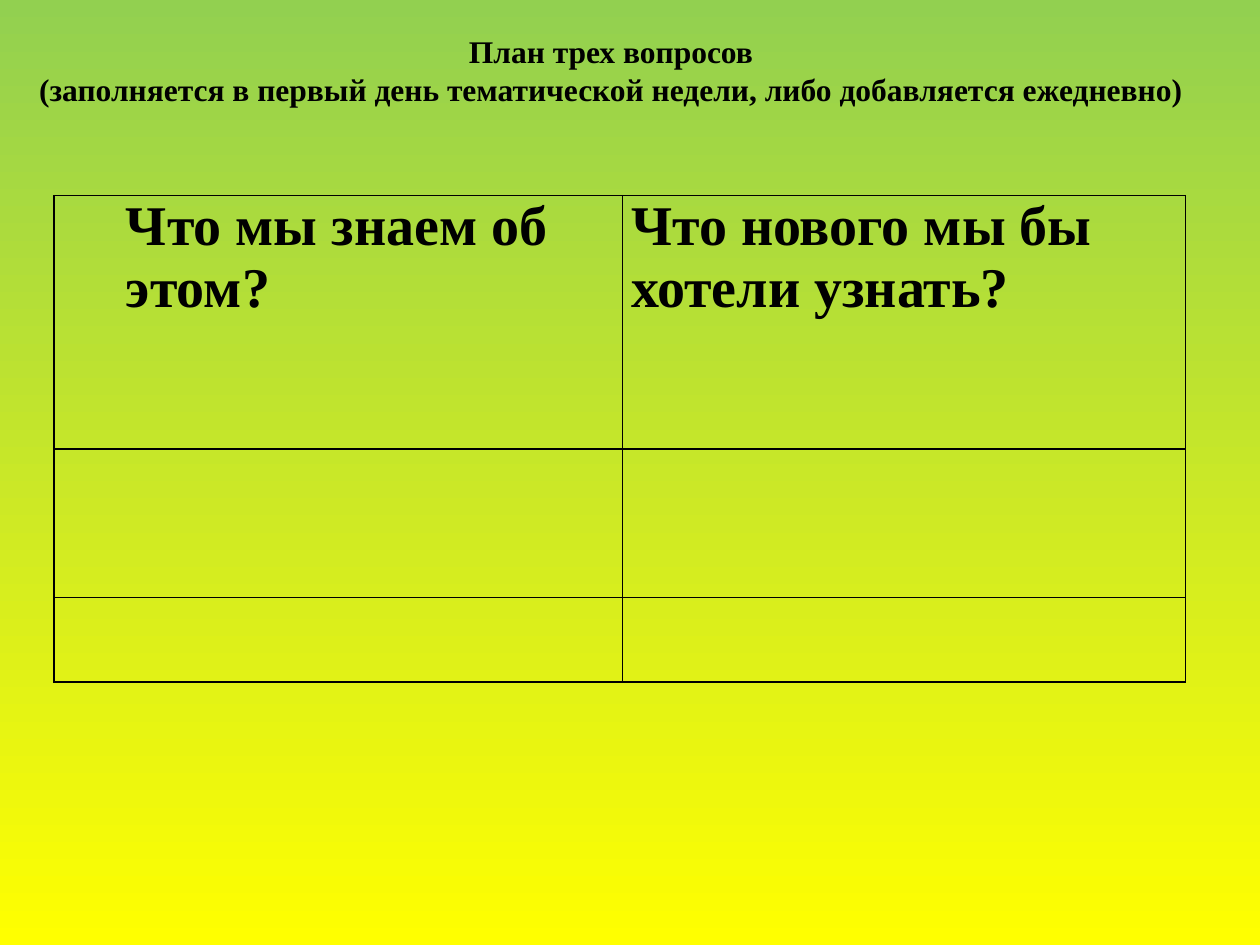
import pptx
import pptx.util
import pptx.dml.color
import pptx.enum.text
import pptx.oxml.ns
import lxml.etree

GREEN = pptx.dml.color.RGBColor(0x92, 0xD0, 0x50)
YELLOW = pptx.dml.color.RGBColor(0xFF, 0xFF, 0x00)
BLACK = pptx.dml.color.RGBColor(0, 0, 0)

WIDE = pptx.util.Inches(10)
HIGH = pptx.util.Inches(7.5)
FONT = {"name": "Times New Roman", "bold": True}

TITLE = [
    "План трех вопросов",
    "(заполняется в первый день тематической недели, либо добавляется ежедневно)",
]
HEADS = ["Что мы знаем об этом?", "Что нового мы бы хотели узнать?"]
INDENTS = [0.5, 0]
COLS = [4.51, 4.47]
ROWS = [2.01, 1.18, 0.67]


def place(left, top, width, height):
    """Turn shares of the slide into lengths."""
    return [int(part * side) for part, side in
            zip((left, top, width, height), (WIDE, HIGH) * 2)]


def apply(item, values):
    for name, value in values.items():
        setattr(item, name, value)


def write(para, text, size):
    run = para.add_run()
    run.text = text
    apply(run.font, {**FONT, "size": pptx.util.Pt(size)})
    run.font.color.rgb = BLACK


def paint(slide):
    fill = slide.background.fill
    fill.gradient()
    fill.gradient_angle = 270
    for stop, color in zip(fill.gradient_stops, (GREEN, YELLOW)):
        stop.color.rgb = color


def add_title(slide):
    box = slide.shapes.add_textbox(*place(0.016, 0.025, 0.938, 0.135))
    frame = box.text_frame
    apply(frame, {
        "word_wrap": False,
        "auto_size": pptx.enum.text.MSO_AUTO_SIZE.NONE,
        "vertical_anchor": pptx.enum.text.MSO_ANCHOR.TOP,
        "margin_top": pptx.util.Inches(0.07),
    })
    for index, text in enumerate(TITLE):
        para = frame.add_paragraph() if index else frame.paragraphs[0]
        para.alignment = pptx.enum.text.PP_ALIGN.CENTER
        write(para, text, 18)


def border(cell):
    props = cell._tc.get_or_add_tcPr()
    for side in "LRTB":
        line = lxml.etree.SubElement(
            props, pptx.oxml.ns.qn("a:ln" + side), w=str(pptx.util.Pt(1)))
        fill = lxml.etree.SubElement(line, pptx.oxml.ns.qn("a:solidFill"))
        lxml.etree.SubElement(
            fill, pptx.oxml.ns.qn("a:srgbClr"), val=str(BLACK))


def add_grid(slide):
    area = place(0.043, 0.207, 0.898, 0.515)
    table = slide.shapes.add_table(len(ROWS), len(COLS), *area).table
    apply(table, {"first_row": False, "horz_banding": False})
    for col, width in zip(table.columns, COLS):
        col.width = pptx.util.Inches(width)
    for row, height in zip(table.rows, ROWS):
        row.height = pptx.util.Inches(height)

    # Clear cells with thin black borders
    inset = pptx.util.Inches(0.07)
    for cell in table.iter_cells():
        border(cell)
        cell.fill.background()
        apply(cell, {"margin_left": inset, "margin_right": inset,
                     "margin_top": 0, "margin_bottom": 0})

    # Questions in the top row
    for col, (text, indent) in enumerate(zip(HEADS, INDENTS)):
        para = table.cell(0, col).text_frame.paragraphs[0]
        para._p.get_or_add_pPr().set("marL", str(pptx.util.Inches(indent)))
        write(para, text, 32)


def main():
    deck = pptx.Presentation()
    apply(deck, {"slide_width": WIDE, "slide_height": HIGH})
    slide = deck.slides.add_slide(deck.slide_layouts[6])
    paint(slide)
    add_grid(slide)
    add_title(slide)
    deck.save("out.pptx")


if __name__ == "__main__":
    main()
